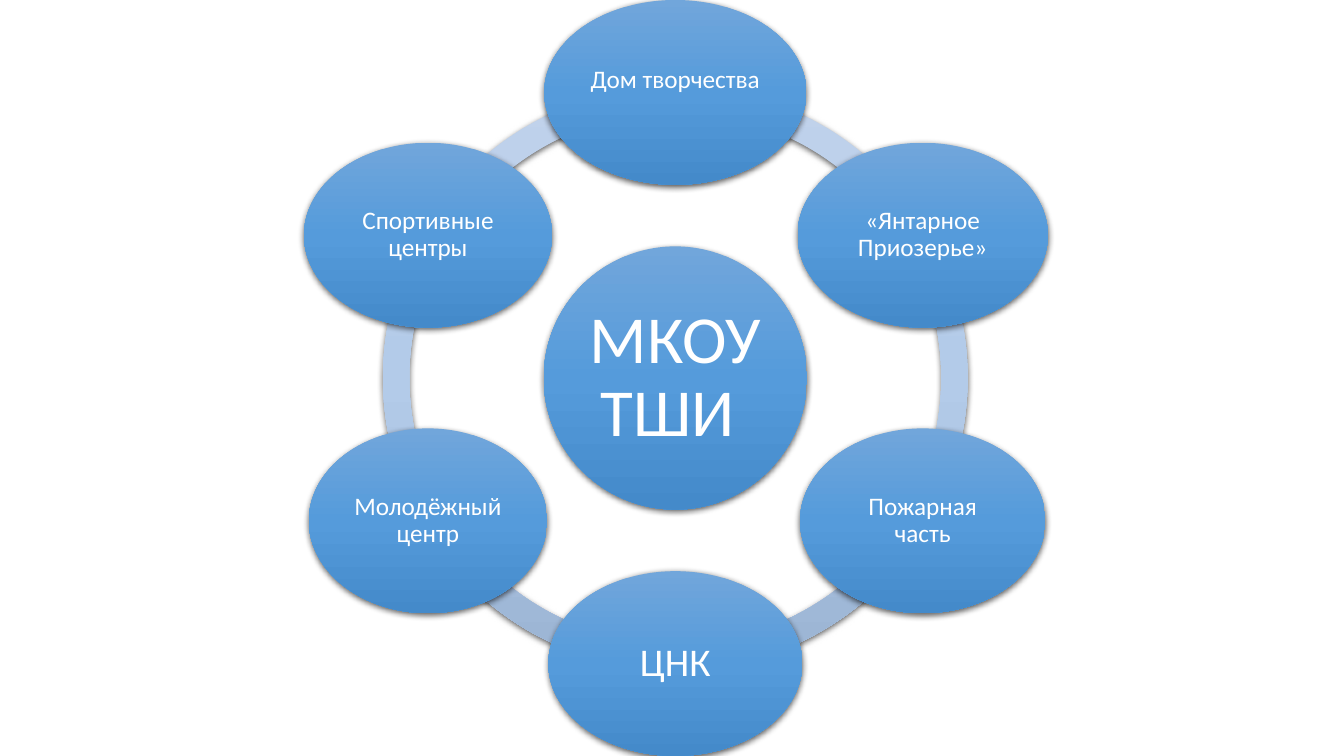
import copy
import math

import pptx
import pptx.dml.color
import pptx.enum.shapes
import pptx.enum.text
import pptx.oxml
import pptx.oxml.ns
import pptx.util

Pt = pptx.util.Pt
RGB = pptx.dml.color.RGBColor
SHAPES = pptx.enum.shapes.MSO_SHAPE

WHITE = RGB(0xFF, 0xFF, 0xFF)
NODE_COLOURS = [RGB(0x71, 0xA6, 0xDB), RGB(0x55, 0x9B, 0xDB), RGB(0x44, 0x8A, 0xCA)]
RING_COLOURS = [RGB(0xC0, 0xD2, 0xEB), RGB(0xB3, 0xCB, 0xE9), RGB(0x9B, 0xB4, 0xD3)]
SHADOW = (
    f'<a:outerShdw {pptx.oxml.ns.nsdecls("a")} blurRad="{Pt(4.5)}" dist="{Pt(1.5)}" '
    'dir="5400000" rotWithShape="0">'
    '<a:srgbClr val="000000"><a:alpha val="63000"/></a:srgbClr></a:outerShdw>'
)

RING_DIAMETER = 417.6
ORBIT_RADIUS = 204
HUB_DIAMETER = 188
NODE_HEIGHT = 132
STEP = 60
NODES = [
    ("Дом творчества", 187.2, dict(size=18, spacing=1.0, lift=20)),
    ("«Янтарное Приозерье»", 178.8, dict(size=18)),
    ("Пожарная часть", 175.2, dict(size=18)),
    ("ЦНК", 181.4, dict(size=28, inset=2.8)),
    ("Молодёжный центр", 170.2, dict(size=18)),
    ("Спортивные центры", 177.2, dict(size=18)),
]


def add_glossy(slide, preset, centre_x, centre_y, width, height, colours):
    """Add a borderless shape with a vertical gradient and a soft shadow."""
    shape = slide.shapes.add_shape(
        preset, Pt(centre_x - width / 2), Pt(centre_y - height / 2), Pt(width), Pt(height))
    shape.fill.gradient()
    shape.fill.gradient_angle = 270
    stop_list = shape.element.spPr.find(".//" + pptx.oxml.ns.qn("a:gsLst"))
    stop_list.append(copy.deepcopy(stop_list[0]))
    for stop, position, colour in zip(shape.fill.gradient_stops, (0, 0.5, 1), colours):
        stop.position = position
        stop.color.rgb = colour
    shape.line.fill.background()
    shape.shadow.inherit = False
    effects = shape.element.spPr.find(pptx.oxml.ns.qn("a:effectLst"))
    effects.append(pptx.oxml.parse_xml(SHADOW))
    return shape


def write_text(shape, text, size, spacing=0.9, inset=2.3, lift=0):
    """Write centred white text, raised by half of the extra bottom inset."""
    frame = shape.text_frame
    frame.word_wrap = True
    frame.vertical_anchor = pptx.enum.text.MSO_ANCHOR.MIDDLE
    frame.margin_left = frame.margin_right = frame.margin_top = Pt(inset)
    frame.margin_bottom = Pt(inset + lift)
    paragraph = frame.paragraphs[0]
    paragraph.alignment = pptx.enum.text.PP_ALIGN.CENTER
    paragraph.line_spacing = spacing
    run = paragraph.add_run()
    run.text = text
    run.font.name = "Calibri"
    run.font.size = Pt(size)
    run.font.color.rgb = WHITE


def draw_ring(slide, centre_x, centre_y):
    """Draw the ring as one arc between each pair of neighbouring nodes."""
    for index in range(len(NODES)):
        start = (210 - index * STEP) % 360
        arc = add_glossy(slide, SHAPES.BLOCK_ARC, centre_x, centre_y,
                         RING_DIAMETER, RING_DIAMETER, RING_COLOURS)
        arc.adjustments[0] = start * 0.6
        arc.adjustments[1] = (start + STEP) % 360 * 0.6
        arc.adjustments[2] = 0.045


def draw_hub(slide, centre_x, centre_y):
    """Draw the central circle."""
    hub = add_glossy(slide, SHAPES.OVAL, centre_x, centre_y,
                     HUB_DIAMETER, HUB_DIAMETER, NODE_COLOURS)
    write_text(hub, "МКОУ ТШИ ", size=48, inset=5)


def draw_nodes(slide, centre_x, centre_y):
    """Draw the partner ovals clockwise from the top of the orbit."""
    for index, (label, width, text_format) in enumerate(NODES):
        angle = math.radians(index * STEP - 90)
        node = add_glossy(slide, SHAPES.OVAL,
                          centre_x + ORBIT_RADIUS * math.cos(angle),
                          centre_y + ORBIT_RADIUS * math.sin(angle),
                          width, NODE_HEIGHT, NODE_COLOURS)
        write_text(node, label, **text_format)


def draw_partners(slide, left, top, width, height):
    """Draw the whole radial diagram centred in the given box."""
    centre = (left + width / 2, top + height / 2)
    draw_ring(slide, *centre)
    draw_hub(slide, *centre)
    draw_nodes(slide, *centre)


def main():
    """Build the slide and save it."""
    deck = pptx.Presentation()
    deck.slide_width, deck.slide_height = Pt(960), Pt(540)
    slide = deck.slides.add_slide(deck.slide_layouts[6])
    draw_partners(slide, left=212.4, top=0, width=540, height=540)
    deck.save("out.pptx")


if __name__ == "__main__":
    main()
